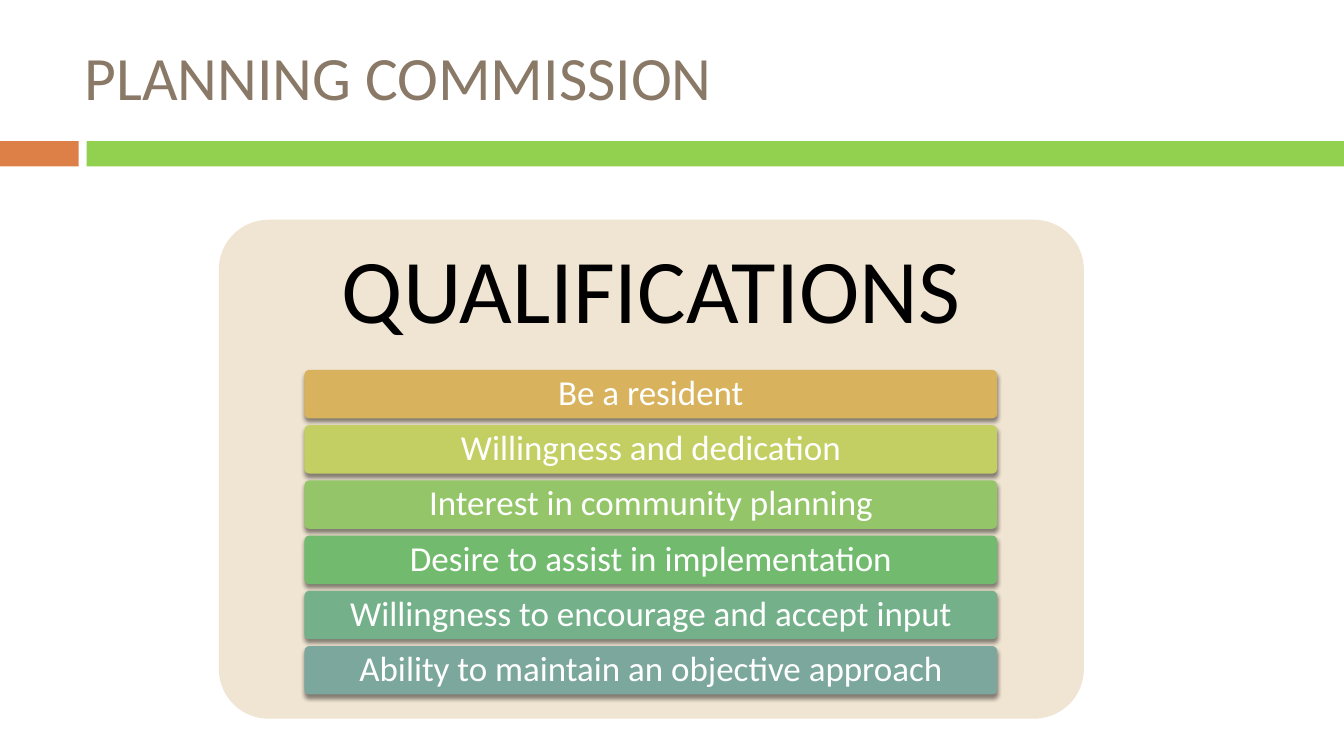
from lxml.etree import SubElement
from pptx import Presentation
from pptx.dml.color import RGBColor
from pptx.enum.shapes import MSO_SHAPE as Preset
from pptx.enum.text import MSO_ANCHOR as Anchor, PP_ALIGN as Align
from pptx.oxml.ns import qn
from pptx.util import Inches, Pt

FONT = "Calibri"
TITLE = "PLANNING COMMISSION"
HEADING = "QUALIFICATIONS"
QUALIFICATIONS = [
    ("Be a resident", "D8B25C"),
    ("Willingness and dedication", "C3CF62"),
    ("Interest in community planning", "94C568"),
    ("Desire to assist in implementation", "72BB6E"),
    ("Willingness to encourage and accept input", "74B18A"),
    ("Ability to maintain an objective approach", "7BA79D"),
]
BANDS = [((0, 1.4, 0.78, 0.25), "DD8047"), ((0.86, 1.4, 12.47, 0.25), "92D050")]
PANEL = (2.17, 2.18, 8.58, 4.95)
BAR_LEFT, BAR_TOP, BAR_WIDTH, BAR_HEIGHT = 3.02, 3.67, 6.87, 0.48
BAR_STEP = 0.548


def color(value):
    return RGBColor.from_string(value)


def add_box(slide, preset, bounds, fill):
    shape = slide.shapes.add_shape(preset, *map(Inches, bounds))
    shape.shadow.inherit = False
    shape.fill.solid()
    shape.fill.fore_color.rgb = color(fill)
    shape.line.fill.background()
    if preset == Preset.ROUNDED_RECTANGLE:
        shape.adjustments[0] = 0.1
    return shape


def add_shadow(shape):
    effects = shape._element.spPr.find(qn("a:effectLst"))
    shadow = SubElement(effects, qn("a:outerShdw"), blurRad=str(Pt(3)),
                        dist=str(Pt(2.4)), dir="5400000", rotWithShape="0")
    tint = SubElement(shadow, qn("a:srgbClr"), val="000000")
    SubElement(tint, qn("a:alpha"), val="45000")


def write(shape, text, size, fill, align, spacing, margins=(0.1, 0.05)):
    frame = shape.text_frame
    frame.word_wrap = True
    frame.vertical_anchor = Anchor.MIDDLE
    frame.margin_left = frame.margin_right = Inches(margins[0])
    frame.margin_top = frame.margin_bottom = Inches(margins[1])
    paragraph = frame.paragraphs[0]
    paragraph.alignment = align
    paragraph.line_spacing = spacing
    run = paragraph.add_run()
    run.text = text
    run.font.name = FONT
    run.font.size = Pt(size)
    run.font.color.rgb = color(fill)


def add_text(slide, bounds, *style):
    write(slide.shapes.add_textbox(*map(Inches, bounds)), *style)


def main():
    presentation = Presentation()
    presentation.slide_width = Inches(13.33)
    presentation.slide_height = Inches(7.5)
    slide = presentation.slides.add_slide(presentation.slide_layouts[6])

    for bounds, fill in BANDS:
        add_box(slide, Preset.RECTANGLE, bounds, fill)
    add_text(slide, (0.74, 0.21, 11.89, 1.08), TITLE, 44, "8A7967", Align.LEFT, 1.0)

    add_box(slide, Preset.ROUNDED_RECTANGLE, PANEL, "F0E4D2")
    add_text(slide, (*PANEL[:3], 1.48), HEADING, 65, "000000", Align.CENTER, 0.9,
             (0.27, 0.27))

    for index, (text, fill) in enumerate(QUALIFICATIONS):
        top = BAR_TOP + index * BAR_STEP
        bar = add_box(slide, Preset.ROUNDED_RECTANGLE,
                      (BAR_LEFT, top, BAR_WIDTH, BAR_HEIGHT), fill)
        add_shadow(bar)
        write(bar, text, 25, "FFFFFF", Align.CENTER, 0.9, (0.07, 0.05))

    presentation.save("out.pptx")


if __name__ == "__main__":
    main()
